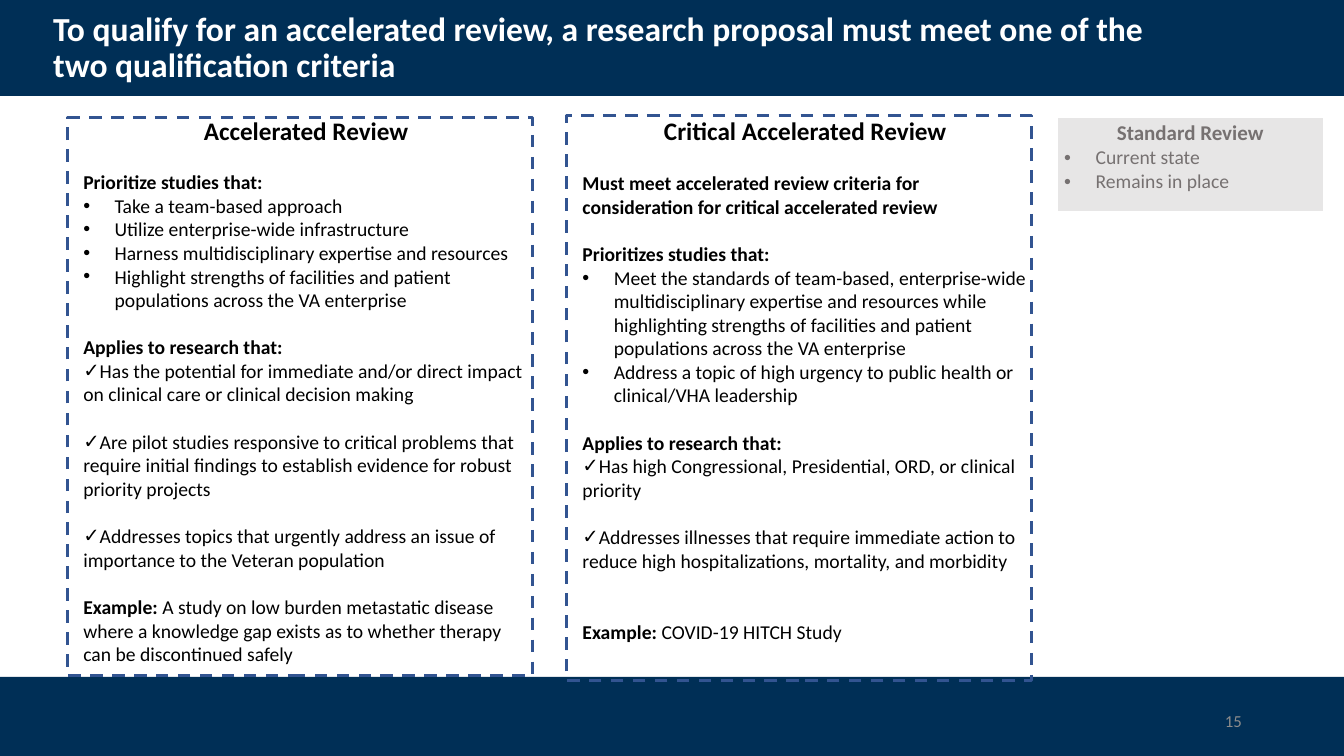
from lxml import etree
from pptx import Presentation
from pptx.dml.color import RGBColor
from pptx.enum.dml import MSO_LINE
from pptx.enum.shapes import MSO_SHAPE
from pptx.enum.text import MSO_ANCHOR, PP_ALIGN
from pptx.oxml.ns import qn
from pptx.util import Cm, Pt

RECT = MSO_SHAPE.RECTANGLE
DASH = MSO_LINE.DASH
MIDDLE = MSO_ANCHOR.MIDDLE
LEFT, CENTER, RIGHT = PP_ALIGN.LEFT, PP_ALIGN.CENTER, PP_ALIGN.RIGHT
NAVY, BLUE, WHITE, BLACK = "002F56", "325491", "FFFFFF", "000000"
MARKS = {"dot": ("•", Cm(0.79)), "tick": ("✓", 0)}


def paint(text):
    return RGBColor.from_string(text)


def write(frame, rows, color, align=LEFT):
    """Each row holds kind, size, space before and text; | ends a bold lead."""
    frame.word_wrap = True
    for i, (kind, size, gap, text) in enumerate(rows):
        para = frame.paragraphs[0] if i == 0 else frame.add_paragraph()
        para.alignment = CENTER if kind == "head" else align
        para.space_before = Pt(gap)
        if kind in MARKS:
            char, indent = MARKS[kind]
            props = para._p.get_or_add_pPr()
            props.set("marL", str(indent))
            props.set("indent", str(-indent))
            if kind == "dot":
                etree.SubElement(props, qn("a:buFont")).set("typeface", "Arial")
            etree.SubElement(props, qn("a:buChar")).set("char", char)
        font = para.font
        font.name, font.size = "Calibri", Pt(size)
        font.color.rgb = paint(color)
        lead, bar, rest = text.partition("|")
        if bar:
            para.add_run().text = lead
            para.add_run().text = rest
            para.runs[0].font.bold = True
        else:
            para.add_run().text = text
            font.bold = kind in ("head", "bold")


deck = Presentation()
deck.slide_width, deck.slide_height = Cm(33.87), Cm(19.05)
slide = deck.slides.add_slide(deck.slide_layouts[6])
shapes = slide.shapes

# Navy bands at top and bottom
for top, height in ((0, 2.42), (17.06, 1.99)):
    band = shapes.add_shape(RECT, 0, Cm(top), deck.slide_width, Cm(height))
    band.shadow.inherit = False
    band.fill.solid()
    band.fill.fore_color.rgb = paint(NAVY)
    band.line.fill.background()

# Title
title = shapes.add_textbox(Cm(1.09), Cm(0.28), Cm(29.21), Cm(1.88)).text_frame
title.vertical_anchor = MIDDLE
write(title, [("bold", 24, 0, "To qualify for an accelerated review, a research "
               "proposal must meet one of the two qualification criteria")], WHITE)
title.paragraphs[0].line_spacing = 0.9

# Page number
page = shapes.add_textbox(Cm(23.93), Cm(17.65), Cm(7.62), Cm(1.02)).text_frame
page.vertical_anchor = MIDDLE
write(page, [("plain", 12, 0, "15")], "8C8C8C", RIGHT)

# Dashed frames
for left, top, height in ((1.7, 2.97, 14.05), (14.27, 2.92, 14.22)):
    box = shapes.add_shape(RECT, Cm(left), Cm(top), Cm(11.73), Cm(height))
    box.shadow.inherit = False
    box.fill.background()
    box.line.color.rgb = paint(BLUE)
    box.line.width = Pt(2.25)
    box.line.dash_style = DASH

# Review columns
fast = [
    ("head", 18, 0, "Accelerated Review"),
    ("bold", 14, 18, "Prioritize studies that:"),
    ("dot", 14, 0, "Take a team-based approach"),
    ("dot", 14, 0, "Utilize enterprise-wide infrastructure"),
    ("dot", 14, 0, "Harness multidisciplinary expertise and resources"),
    ("dot", 14, 0, "Highlight strengths of facilities and patient populations "
     "across the VA enterprise"),
    ("bold", 14, 17, "Applies to research that:"),
    ("tick", 14, 0, "Has the potential for immediate and/or direct impact on "
     "clinical care or clinical decision making"),
    ("tick", 14, 17, "Are pilot studies responsive to critical problems that "
     "require initial findings to establish evidence for robust priority projects"),
    ("tick", 14, 17, "Addresses topics that urgently address an issue of "
     "importance to the Veteran population"),
    ("plain", 14, 17, "Example: |A study on low burden metastatic disease where a "
     "knowledge gap exists as to whether therapy can be discontinued safely"),
]
urgent = [
    ("head", 18, 0, "Critical Accelerated Review"),
    ("bold", 14, 18, "Must meet accelerated review criteria for consideration "
     "for critical accelerated review"),
    ("bold", 14, 17, "Prioritizes studies that:"),
    ("dot", 14, 0, "Meet the standards of team-based, enterprise-wide "
     "multidisciplinary expertise and resources while highlighting strengths of "
     "facilities and patient populations across the VA enterprise"),
    ("dot", 14, 0, "Address a topic of high urgency to public health or "
     "clinical/VHA leadership"),
    ("bold", 14, 17, "Applies to research that:"),
    ("tick", 14, 0, "Has high Congressional, Presidential, ORD, or clinical priority"),
    ("tick", 14, 17, "Addresses illnesses that require immediate action to reduce "
     "high hospitalizations, mortality, and morbidity"),
    ("plain", 14, 34, "Example:| COVID-19 HITCH Study"),
]
for left, top, rows in ((1.85, 2.77, fast), (14.43, 2.79, urgent)):
    text = shapes.add_textbox(Cm(left), Cm(top), Cm(11.73), Cm(14.22))
    write(text.text_frame, rows, BLACK)

# Standard review table
table = shapes.add_table(1, 1, Cm(26.64), Cm(2.95), Cm(6.71), Cm(2.39)).table
table.first_row = table.horz_banding = False
cell = table.cell(0, 0)
cell.margin_left = cell.margin_right = Cm(0.18)
cell.margin_top = cell.margin_bottom = Cm(0.08)
for side, width in (("L", 0.6), ("R", 0.6), ("T", 0.6), ("B", 1.32)):
    edge = etree.SubElement(cell._tc.get_or_add_tcPr(), qn("a:ln" + side))
    edge.set("w", str(Pt(width)))
    fill = etree.SubElement(edge, qn("a:solidFill"))
    etree.SubElement(fill, qn("a:srgbClr")).set("val", WHITE)
cell.fill.solid()
cell.fill.fore_color.rgb = paint("E7E6E6")
write(cell.text_frame, [
    ("head", 15, 0, "Standard Review"),
    ("dot", 14, 0, "Current state"),
    ("dot", 14, 0, "Remains in place"),
], "767171")

deck.save("out.pptx")
